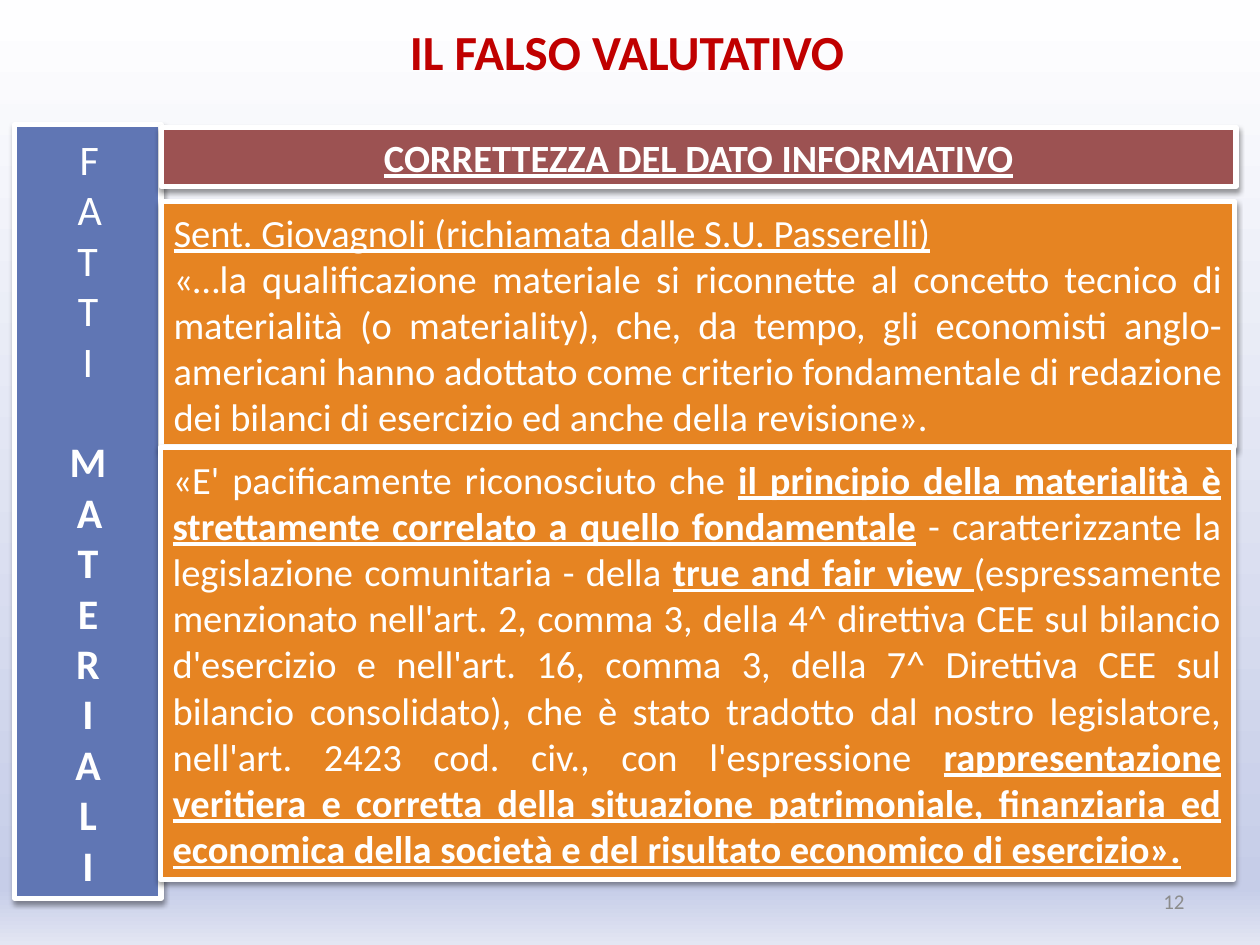
"""Build the slide on false valuations and the materiality of facts."""
from copy import deepcopy

from lxml.etree import SubElement
from pptx import Presentation
from pptx.dml.color import RGBColor
from pptx.enum.shapes import MSO_SHAPE as SHAPE
from pptx.enum.text import MSO_ANCHOR as ANCHOR, MSO_AUTO_SIZE as AUTO, PP_ALIGN as AL
from pptx.oxml.ns import qn
from pptx.util import Cm, Pt


def rgb(value):
    return RGBColor.from_string(value)


def write(tf, paras, size, color, align):
    tf.word_wrap = True
    for i, runs in enumerate(paras):
        p = tf.paragraphs[0] if i == 0 else tf.add_paragraph()
        p.alignment = align
        for text, style in runs:
            r = p.add_run()
            r.text = text
            r.font.name, r.font.size = "Calibri", Pt(size)
            r.font.color.rgb = rgb(color)
            r.font.bold, r.font.underline = "b" in style, "u" in style


prs = Presentation()
prs.slide_width, prs.slide_height = Cm(25.4), Cm(19.05)
s = prs.slides.add_slide(prs.slide_layouts[5])

fill = s.background.fill
fill.gradient()
fill.gradient_angle = 270
gs_list = s.element.find(".//" + qn("a:gsLst"))
gs_list.append(deepcopy(gs_list[-1]))
stops = [(0.01, "FEFEFF"), (0.94, "C6CDE8"), (1, "E3E6F3")]
for stop, (position, color) in zip(fill.gradient_stops, stops):
    stop.position = position
    stop.color.rgb = rgb(color)

title = s.shapes.title
title.left, title.top, title.width, title.height = Cm(0.64), Cm(0.3), Cm(24), Cm(1.45)
write(title.text_frame, [[("IL FALSO VALUTATIVO", "b")]], 28, "C00000", AL.CENTER)

number = s.shapes.add_textbox(Cm(18.21), Cm(17.65), Cm(5.92), Cm(1.02))
number.text_frame.vertical_anchor = ANCHOR.MIDDLE
write(number.text_frame, [[("12", "")]], 12, "8C8C8C", AL.RIGHT)

side = [[("FATTI ", ""), ("MATERIALI", "b")]]
ruling = [
    [("Sent. Giovagnoli (richiamata dalle S.U. Passerelli)", "u")],
    [("«…la qualificazione materiale si riconnette al concetto tecnico di "
      "materialità (o materiality), che, da tempo, gli economisti anglo-americani "
      "hanno adottato come criterio fondamentale di redazione dei bilanci di "
      "esercizio ed anche della revisione».", "")],
]
principle = [[
    ("«E' pacificamente riconosciuto che ", ""),
    ("il principio della materialità è strettamente correlato a quello "
     "fondamentale", "bu"),
    (" - caratterizzante la legislazione comunitaria - della ", ""),
    ("true and fair view ", "bu"),
    ("(espressamente menzionato nell'art. 2, comma 3, della 4^ direttiva CEE sul "
     "bilancio d'esercizio e nell'art. 16, comma 3, della 7^ Direttiva CEE sul "
     "bilancio consolidato), che è stato tradotto dal nostro legislatore, "
     "nell'art. 2423 cod. civ., con l'espressione ", ""),
    ("rappresentazione veritiera e corretta della situazione patrimoniale, "
     "finanziaria ed economica della società e del risultato economico di "
     "esercizio».", "bu"),
]]
heading = [[("CORRETTEZZA DEL DATO INFORMATIVO", "bu")]]

boxes = [
    (0.3, 2.51, 2.95, 15.6, "6076B4", side, 24, AL.CENTER),
    (3.25, 4.06, 21.64, 4.95, "E68422", ruling, 22, AL.JUSTIFY),
    (3.23, 9.02, 21.64, 8.71, "E68422", principle, 22, AL.JUSTIFY),
    (3.25, 2.57, 21.67, 1.19, "9C5252", heading, 22, AL.CENTER),
]
for x, y, w, h, color, paras, size, align in boxes:
    sp = s.shapes.add_shape(SHAPE.RECTANGLE, Cm(x), Cm(y), Cm(w), Cm(h))
    sp.fill.solid()
    sp.fill.fore_color.rgb = rgb(color)
    sp.line.color.rgb = rgb("FFFFFF")
    sp.line.width = Pt(3)
    sp.shadow.inherit = False
    effects = sp.element.spPr.find(qn("a:effectLst"))
    shadow = SubElement(effects, qn("a:outerShdw"), blurRad=str(Pt(3.1)),
                        dist=str(Pt(1.6)), dir="5400000", rotWithShape="0")
    black = SubElement(shadow, qn("a:srgbClr"), val="000000")
    SubElement(black, qn("a:alpha"), val="38000")
    tf = sp.text_frame
    write(tf, paras, size, "FFFFFF", align)
    tf.auto_size = AUTO.SHAPE_TO_FIT_TEXT
    if paras is side:
        sp.element.txBody.find(qn("a:bodyPr")).set("vert", "wordArtVert")

prs.save("out.pptx")
